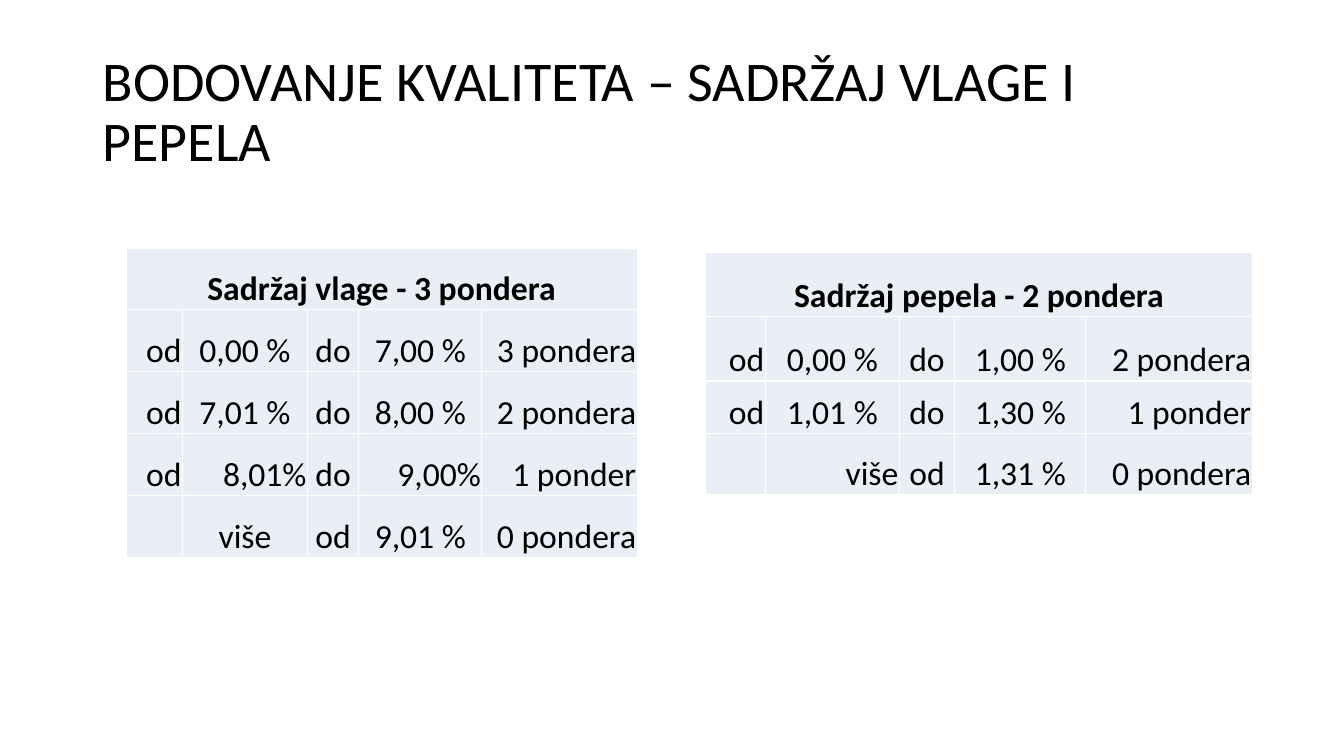
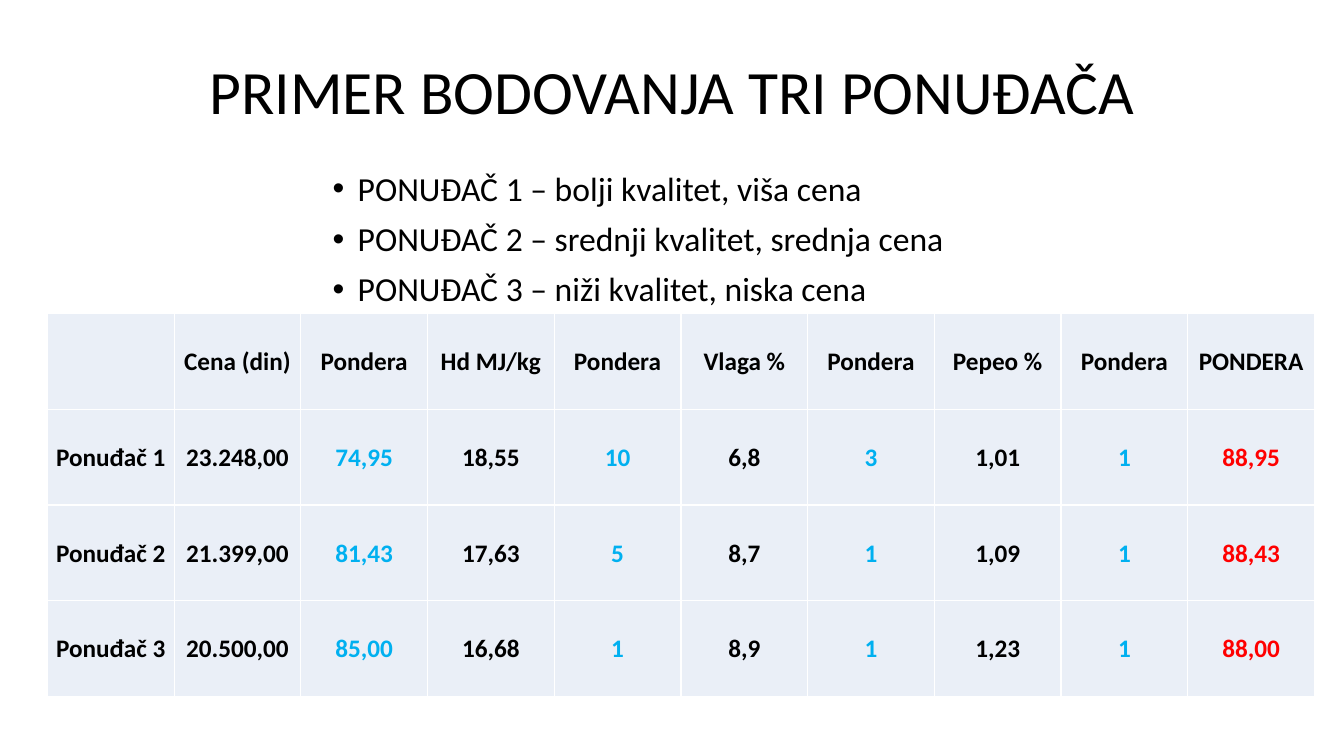
from lxml import etree
from pptx import Presentation
from pptx.dml.color import RGBColor
from pptx.enum import text as t
from pptx.oxml import ns
from pptx.util import Inches, Pt

BLACK = RGBColor(0x00, 0x00, 0x00)
WHITE = RGBColor(0xFF, 0xFF, 0xFF)
PALE = RGBColor(0xEA, 0xEF, 0xF7)
CYAN = RGBColor(0x00, 0xB0, 0xF0)
RED = RGBColor(0xFF, 0x00, 0x00)
FONT = "Calibri"
ALIGN = {"l": t.PP_ALIGN.LEFT, "c": t.PP_ALIGN.CENTER, "r": t.PP_ALIGN.RIGHT}


def write(paragraph, words, size, align, color=BLACK, bold=False):
    paragraph.alignment = ALIGN[align]
    run = paragraph.add_run()
    run.text = words
    run.font.name = FONT
    run.font.size = Pt(size)
    run.font.bold = bold
    run.font.color.rgb = color


def add_grid(slide, left, top, widths, heights, anchor):
    frame = slide.shapes.add_table(
        len(heights), len(widths), Inches(left), Inches(top),
        Inches(sum(widths)), Inches(sum(heights)))
    grid = frame.table
    grid.first_row = grid.horz_banding = False
    for column, width in zip(grid.columns, widths):
        column.width = Inches(width)
    for row, height in zip(grid.rows, heights):
        row.height = Inches(height)
    for cell in grid.iter_cells():
        cell.margin_left = cell.margin_right = cell.margin_top = Inches(0.01)
        cell.margin_bottom = 0
        cell.vertical_anchor = anchor
        properties = cell._tc.get_or_add_tcPr()
        for edge in ("a:lnL", "a:lnR", "a:lnT", "a:lnB"):
            line = etree.SubElement(properties, ns.qn(edge), w=str(Pt(1)))
            paint = etree.SubElement(line, ns.qn("a:solidFill"))
            etree.SubElement(paint, ns.qn("a:srgbClr"), val=str(WHITE))
        cell.fill.solid()
        cell.fill.fore_color.rgb = PALE
    return grid


deck = Presentation()
deck.slide_width = Inches(13.33)
deck.slide_height = Inches(7.5)

slides = []
for heading, top, size, align in [
    ("BODOVANJE KVALITETA – SADRŽAJ VLAGE I PEPELA", 0.4, 40, "l"),
    ("PRIMER BODOVANJA TRI PONUĐAČA", 0.21, 44, "c"),
]:
    slide = deck.slides.add_slide(deck.slide_layouts[6])
    slides.append(slide)
    title = slide.shapes.add_textbox(
        Inches(0.92), Inches(top), Inches(11.5), Inches(1.45)).text_frame
    title.word_wrap = True
    title.vertical_anchor = t.MSO_ANCHOR.MIDDLE
    title.paragraphs[0].line_spacing = 0.9
    write(title.paragraphs[0], heading, size, align)
quality, example = slides

scales = [
    ("Sadržaj vlage - 3 pondera", 1.25, 2.46,
     [0.56, 1.24, 0.51, 1.22, 1.54], [3.07 / 5] * 5, [
         ("rcccr", ["od", "0,00 %", "do", "7,00 %", "3 pondera"]),
         ("rcccr", ["od", "7,01 %", "do", "8,00 %", "2 pondera"]),
         ("rrcrr", ["od", "8,01%", "do", "9,00%", "1 ponder"]),
         ("rcccr", ["", "više", "od", "9,01 %", "0 pondera"]),
     ]),
    ("Sadržaj pepela - 2 pondera", 7, 2.5,
     [0.59, 1.33, 0.55, 1.3, 1.65], [0.64, 0.64, 0.52, 0.61], [
         ("rcccr", ["od", "0,00 %", "do", "1,00 %", "2 pondera"]),
         ("rcccr", ["od", "1,01 %", "do", "1,30 %", "1 ponder"]),
         ("rrccr", ["", "više", "od", "1,31 %", "0 pondera"]),
     ]),
]
for heading, left, top, widths, heights, bands in scales:
    scale = add_grid(quality, left, top, widths, heights, t.MSO_ANCHOR.BOTTOM)
    scale.cell(0, 0).merge(scale.cell(0, 4))
    write(scale.cell(0, 0).text_frame.paragraphs[0], heading, 24, "c", bold=True)
    for r, (aligns, band) in enumerate(bands, 1):
        for c, (align, words) in enumerate(zip(aligns, band)):
            if words:
                write(scale.cell(r, c).text_frame.paragraphs[0], words, 24, align)

bidders = example.shapes.add_textbox(
    Inches(3.2), Inches(1.66), Inches(9.07), Inches(1.65)).text_frame
bidders.word_wrap = True
for i, offer in enumerate([
    "PONUĐAČ 1 – bolji kvalitet, viša cena",
    "PONUĐAČ 2 – srednji kvalitet, srednja cena",
    "PONUĐAČ 3 – niži kvalitet, niska cena",
]):
    paragraph = bidders.add_paragraph() if i else bidders.paragraphs[0]
    paragraph.line_spacing = 0.9
    paragraph.space_before = Pt(10)
    properties = paragraph._p.get_or_add_pPr()
    properties.set("marL", str(Inches(0.25)))
    properties.set("indent", str(Inches(-0.25)))
    etree.SubElement(properties, ns.qn("a:buFont"), typeface="Arial")
    etree.SubElement(properties, ns.qn("a:buChar"), char="•")
    write(paragraph, offer, 24, "l")

scores = [
    ["", "Cena (din)", "Pondera", "Hd MJ/kg", "Pondera", "Vlaga %",
     "Pondera", "Pepeo %", "Pondera", "PONDERA"],
    ["Ponuđač 1", "23.248,00", "74,95", "18,55", "10", "6,8", "3", "1,01", "1", "88,95"],
    ["Ponuđač 2", "21.399,00", "81,43", "17,63", "5", "8,7", "1", "1,09", "1", "88,43"],
    ["Ponuđač 3", "20.500,00", "85,00", "16,68", "1", "8,9", "1", "1,23", "1", "88,00"],
]
column_colors = [BLACK, BLACK] + [CYAN, BLACK] * 3 + [CYAN, RED]
ranking = add_grid(example, 0.47, 3.11, [12.57 / 10] * 10, [0.95] * 4,
                   t.MSO_ANCHOR.MIDDLE)
for r, row in enumerate(scores):
    for c, (words, color) in enumerate(zip(row, column_colors)):
        if words:
            write(ranking.cell(r, c).text_frame.paragraphs[0], words, 18, "c",
                  color if r else BLACK, bold=True)

deck.save("out.pptx")
